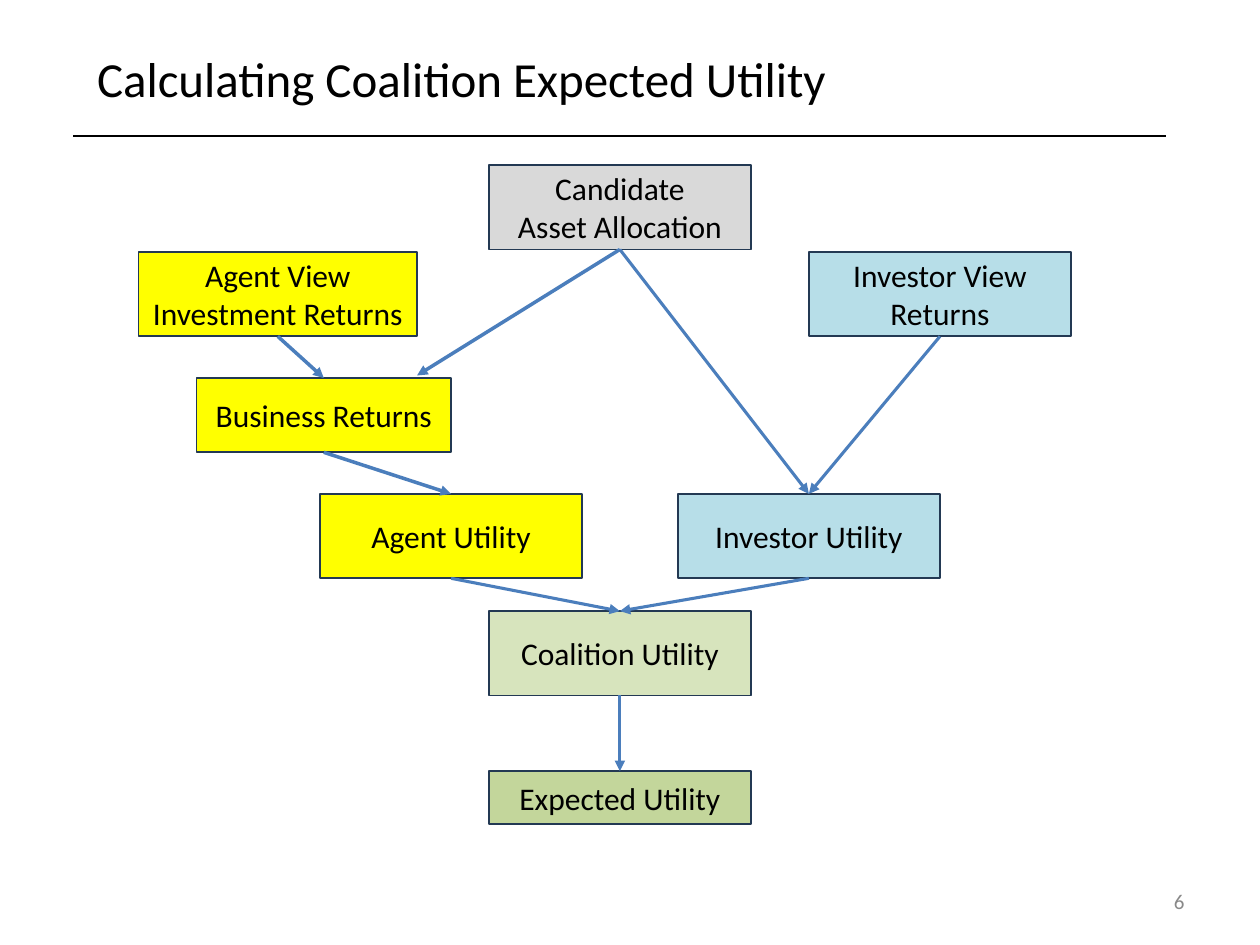
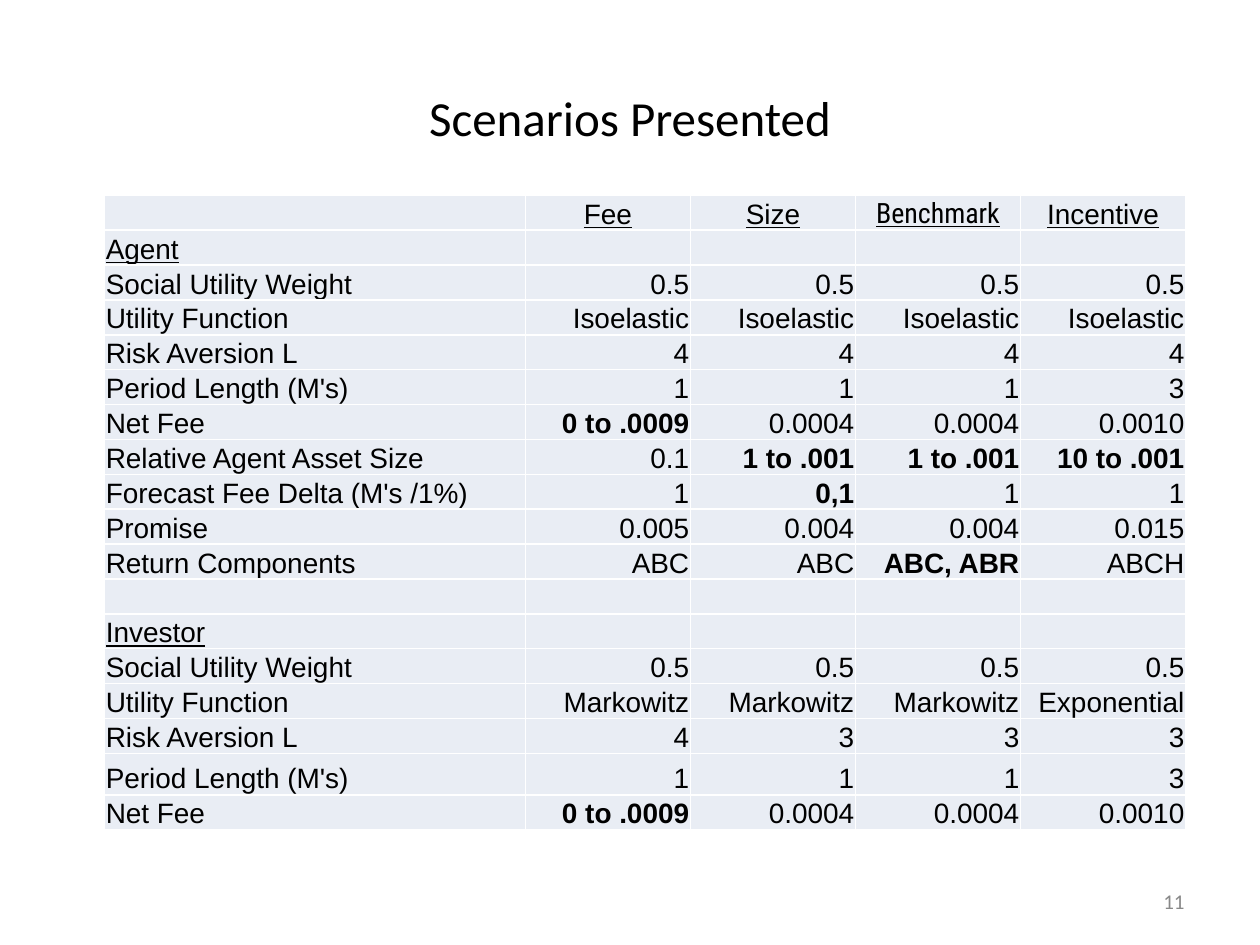
"""Builds two slides: the coalition utility flow and the scenario table."""
from dataclasses import dataclass

from lxml import etree
from pptx import Presentation
from pptx import util as u
from pptx.dml.color import RGBColor
from pptx.enum import shapes, text
from pptx.oxml import ns

COLUMNS, ROWS = 100, 75
SLIDE_WIDTH, SLIDE_HEIGHT = u.Inches(10), u.Inches(7.5)


@dataclass(frozen=True)
class Theme:
    """Colours, fonts and type sizes shared by the slides."""
    ink: str = "000000"
    muted: str = "898989"
    outline: str = "233953"
    arrow: str = "4B7EBC"
    allocation: str = "D9D9D9"
    agent: str = "FFFF00"
    investor: str = "B7DEE8"
    coalition: str = "D7E4BD"
    expected: str = "C3D69B"
    cell: str = "E9EDF4"
    font: str = "Calibri"
    table_font: str = "Arial"
    narrow_font: str = "Roboto Condensed"
    title_size: int = 28
    node_size: int = 18
    table_size: int = 16
    number_size: int = 12


@dataclass(frozen=True)
class Box:
    """An area measured in columns and rows of the slide grid."""
    left: float
    top: float
    width: float
    height: float

    def inner(self, left, top, width, height):
        """Return a box placed relative to this one."""
        return Box(self.left + left, self.top + top, width, height)

    def emu(self):
        """Return left, top, width and height in slide units."""
        column, row = SLIDE_WIDTH / COLUMNS, SLIDE_HEIGHT / ROWS
        return (round(self.left * column), round(self.top * row),
                round(self.width * column), round(self.height * row))


THEME = Theme()
ALIGN = text.PP_ALIGN
ANCHOR = text.MSO_ANCHOR

NODES = {
    "allocation": ("Candidate\nAsset Allocation", 38.2, 0, 20.8, 6.7, THEME.allocation),
    "agent view": ("Agent View\nInvestment Returns", 11.05, 6.9, 22.1, 6.7, THEME.agent),
    "investor view": ("Investor View\nReturns", 63.6, 6.9, 20.8, 6.7, THEME.investor),
    "business": ("Business Returns", 14.7, 16.9, 20.2, 5.9, THEME.agent),
    "agent utility": ("Agent Utility", 24.8, 26.1, 20.8, 6.7, THEME.agent),
    "investor utility": ("Investor Utility", 53.2, 26.1, 20.8, 6.7, THEME.investor),
    "coalition": ("Coalition Utility", 38.2, 35.4, 20.8, 6.7, THEME.coalition),
    "expected": ("Expected Utility", 38.2, 48.1, 20.8, 4.2, THEME.expected),
}
FLOWS = [
    ("investor view", "investor utility", 1.75),
    ("allocation", "investor utility", 1.75),
    ("agent utility", "coalition", 1.75),
    ("investor utility", "coalition", 1.75),
    ("coalition", "expected", 1.75),
    ("agent view", "business", 2),
    ("business", "agent utility", 2),
]

SCENARIOS = ("", "Fee", "Size", "Benchmark", "Incentive")
SECTIONS = ("Agent", "Investor")
BOLD_VALUES = ("0 to .0009", "1 to .001", "10 to .001", "0,1", "ABC, ABR")
BLANKS = ("",) * 4
WEIGHTS = ("Social Utility Weight",) + ("0.5",) * 4
PERIODS = ("Period Length (M's)", "1", "1", "1", "3")
NET_FEES = ("Net Fee", "0 to .0009", "0.0004", "0.0004", "0.0010")
SCENARIO_ROWS = [
    SCENARIOS,
    ("Agent", *BLANKS),
    WEIGHTS,
    ("Utility Function",) + ("Isoelastic",) * 4,
    ("Risk Aversion L",) + ("4",) * 4,
    PERIODS,
    NET_FEES,
    ("Relative Agent Asset Size", "0.1", "1 to .001", "1 to .001", "10 to .001"),
    ("Forecast Fee Delta (M's /1%)", "1", "0,1", "1", "1"),
    ("Promise", "0.005", "0.004", "0.004", "0.015"),
    ("Return Components", "ABC", "ABC", "ABC, ABR", "ABCH"),
    ("", *BLANKS),
    ("Investor", *BLANKS),
    WEIGHTS,
    ("Utility Function", "Markowitz", "Markowitz", "Markowitz", "Exponential"),
    ("Risk Aversion L", "4", "3", "3", "3"),
    PERIODS,
    NET_FEES,
]
TALL_ROW, TALL_HEIGHT, LABEL_WIDTH = 16, 3.3, 33.4


def set_attributes(target, values):
    """Set each named attribute of the target."""
    for name, value in values.items():
        setattr(target, name, value)


def write(frame, words, size, align, color=THEME.ink, **font):
    """Write the lines of words into a text frame in one format."""
    frame.text = words
    for paragraph in frame.paragraphs:
        paragraph.alignment = align
        for run in paragraph.runs:
            set_attributes(run.font, {"name": THEME.font, "size": u.Pt(size), **font})
            run.font.color.rgb = RGBColor.from_string(color)


def place(shape, box):
    """Move and size a shape to fill a box."""
    set_attributes(shape, dict(zip(("left", "top", "width", "height"), box.emu())))


def draw_title(slide, box, words, align):
    """Fill the title placeholder and move it to its box."""
    title = slide.shapes.title
    place(title, box)
    write(title.text_frame, words, THEME.title_size, align)
    set_attributes(title.text_frame, {"word_wrap": True, "auto_size": text.MSO_AUTO_SIZE.NONE,
                                      "vertical_anchor": ANCHOR.MIDDLE})


def draw_number(slide, box, number):
    """Place the slide number at the foot of the slide."""
    frame = slide.shapes.add_textbox(*box.emu()).text_frame
    set_attributes(frame, {"word_wrap": True, "vertical_anchor": ANCHOR.MIDDLE})
    write(frame, str(number), THEME.number_size, ALIGN.RIGHT, THEME.muted)


def add_line(slide, start, end, color, width):
    """Draw a straight connector without a shadow."""
    line = slide.shapes.add_connector(shapes.MSO_CONNECTOR.STRAIGHT, *start, *end)
    line.line.color.rgb = RGBColor.from_string(color)
    line.line.width = u.Pt(width)
    etree.SubElement(line._element.spPr, ns.qn("a:effectLst"))
    return line


def add_arrow(slide, start, end, width):
    """Draw a connector with a triangle at its end."""
    arrow = add_line(slide, start, end, THEME.arrow, width)
    etree.SubElement(arrow.line._get_or_add_ln(), ns.qn("a:tailEnd"), type="triangle")
    return arrow


def draw_node(slide, box, words, fill):
    """Draw one labelled rectangle of the flow."""
    node = slide.shapes.add_shape(shapes.MSO_SHAPE.RECTANGLE, *box.emu())
    node.shadow.inherit = False
    node.fill.solid()
    node.fill.fore_color.rgb = RGBColor.from_string(fill)
    node.line.color.rgb = RGBColor.from_string(THEME.outline)
    node.line.width = u.Pt(1)
    write(node.text_frame, words, THEME.node_size, ALIGN.CENTER)
    set_attributes(node.text_frame, {"word_wrap": True, "vertical_anchor": ANCHOR.MIDDLE})
    return node


def draw_flow(slide, box):
    """Draw the nodes, centred on their columns, and the arrows between them."""
    nodes = {}
    for name, (words, center, top, width, height, fill) in NODES.items():
        area = box.inner(center - width / 2, top, width, height)
        nodes[name] = draw_node(slide, area, words, fill)
    for source, target, width in FLOWS:
        arrow = add_arrow(slide, (0, 0), (0, 0), width)
        arrow.begin_connect(nodes[source], 2)
        arrow.end_connect(nodes[target], 0)
    corner = box.inner(22.1, 16.7, 0, 0).emu()[:2]
    arrow = add_arrow(slide, corner, corner, 2)
    arrow.begin_connect(nodes["allocation"], 2)


def fill_cell(cell, words, align, **font):
    """Write and format one table cell."""
    set_attributes(cell, {"margin_left": u.Inches(0.01), "margin_right": u.Inches(0.01),
                          "margin_top": u.Inches(0.01), "margin_bottom": 0,
                          "vertical_anchor": ANCHOR.BOTTOM})
    cell.fill.solid()
    cell.fill.fore_color.rgb = RGBColor.from_string(THEME.cell)
    write(cell.text_frame, words, THEME.table_size, align, **font)
    if not words:
        ending = cell.text_frame.paragraphs[0]._p.get_or_add_endParaRPr()
        ending.set("sz", str(THEME.table_size * 100))


def draw_scenarios(slide, box):
    """Draw the scenario table with a wide label column."""
    row_count, column_count = len(SCENARIO_ROWS), len(SCENARIOS)
    table = slide.shapes.add_table(row_count, column_count, *box.emu()).table
    set_attributes(table, {"first_row": False, "horz_banding": False})
    value_width = (box.width - LABEL_WIDTH) / (column_count - 1)
    row_height = (box.height - TALL_HEIGHT) / (row_count - 1)
    for index, column in enumerate(table.columns):
        column.width = round(SLIDE_WIDTH / COLUMNS * (value_width if index else LABEL_WIDTH))
    for index, row in enumerate(table.rows):
        height = TALL_HEIGHT if index == TALL_ROW else row_height
        row.height = round(SLIDE_HEIGHT / ROWS * height)
        for position, words in enumerate(SCENARIO_ROWS[index]):
            align = ALIGN.LEFT if position == 0 else ALIGN.RIGHT if index else ALIGN.CENTER
            name = THEME.narrow_font if words == "Benchmark" else THEME.table_font
            fill_cell(row.cells[position], words, align, name=name, bold=words in BOLD_VALUES,
                      underline=index == 0 or words in SECTIONS)


def add_slide(presentation, number):
    """Add a title-only slide with its number."""
    slide = presentation.slides.add_slide(presentation.slide_layouts[5])
    draw_number(slide, Box(71.7, 69.5, 23.3, 4), number)
    return slide


def build_flow_slide(presentation):
    """Build the slide on coalition expected utility."""
    slide = add_slide(presentation, 6)
    draw_title(slide, Box(6.7, 3.3, 86.7, 5.8), "Calculating Coalition Expected Utility", ALIGN.LEFT)
    left, top, width, _ = Box(5.8, 10.8, 86.7, 0).emu()
    add_line(slide, (left, top), (left + width, top), THEME.ink, 0.75)
    draw_flow(slide, Box(11, 13.1, 74, 52.3))


def build_scenario_slide(presentation):
    """Build the slide with the scenario table."""
    slide = add_slide(presentation, 11)
    draw_title(slide, Box(5, 3, 90, 12.5), "Scenarios Presented", ALIGN.CENTER)
    draw_scenarios(slide, Box(8.3, 15.5, 85.8, 49.9))


def main():
    """Build and save the presentation."""
    presentation = Presentation()
    set_attributes(presentation, {"slide_width": SLIDE_WIDTH, "slide_height": SLIDE_HEIGHT})
    build_flow_slide(presentation)
    build_scenario_slide(presentation)
    presentation.save("out.pptx")


if __name__ == "__main__":
    main()
